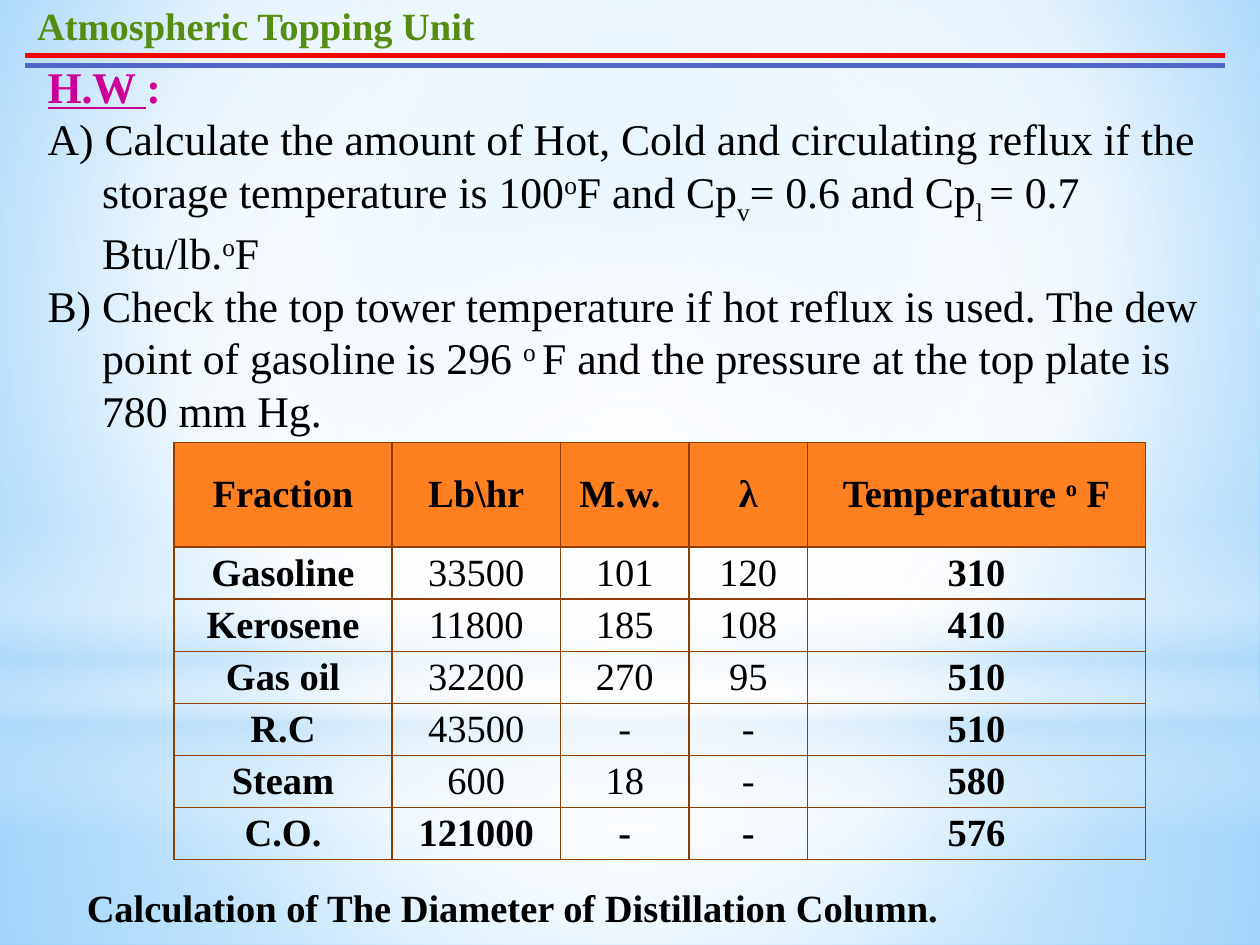
from typing import NamedTuple

from lxml import etree
from pptx import Presentation
from pptx import util as u
from pptx.dml.color import RGBColor
from pptx.enum import shapes, text
from pptx.oxml.ns import qn
from pptx.util import Cm, Pt

FONT = "Times New Roman"
BLACK = RGBColor(0x00, 0x00, 0x00)
WHITE = RGBColor(0xFF, 0xFF, 0xFF)
GREEN = RGBColor(0x56, 0x8D, 0x11)
PINK = RGBColor(0xCC, 0x00, 0x99)
RED = RGBColor(0xFF, 0x00, 0x00)
BLUE = RGBColor(0x4E, 0x67, 0xC8)
ORANGE = RGBColor(0xFF, 0x80, 0x21)
BROWN = RGBColor(0x90, 0x3E, 0x00)
PALE = RGBColor(0xB4, 0xDC, 0xFA)
SKY = RGBColor(0x9E, 0xD5, 0xFF)
DEEP = RGBColor(0x5B, 0xB9, 0xFF)


class Stop(NamedTuple):
    pos: int
    color: RGBColor
    alpha: int = 100


class Glow(NamedTuple):
    """A gradient; focus is left, top, right, bottom in percent, None means linear."""
    stops: list[Stop]
    focus: tuple[int, int, int, int] | None = (50, 50, 50, 50)


class Layer(NamedTuple):
    kind: shapes.MSO_SHAPE
    top: float
    height: float
    glow: Glow


class Rule(NamedTuple):
    y: float
    color: RGBColor


class Style(NamedTuple):
    size: float = 22
    color: RGBColor = BLACK
    bold: bool = True


class Line(NamedTuple):
    """Pieces are parted by |; a leading ^ raises one and a leading _ lowers it."""
    words: str
    inset: bool = True


RECT, OVAL = shapes.MSO_SHAPE.RECTANGLE, shapes.MSO_SHAPE.OVAL
BACK = Glow([Stop(0, SKY), Stop(60, WHITE), Stop(100, DEEP)], (20, 10, 20, 60))
LAYERS = [
    Layer(RECT, 14.17, 4.88, Glow([Stop(0, WHITE, 91), Stop(37, WHITE, 76), Stop(100, PALE, 79)])),
    Layer(RECT, 0, 14.17, Glow([Stop(0, WHITE, 89), Stop(48, WHITE, 62), Stop(100, PALE, 79)])),
    Layer(RECT, 10.46, 6.35, Glow([
        Stop(0, WHITE, 0), Stop(29, WHITE, 30), Stop(45, PALE, 40),
        Stop(55, WHITE, 26), Stop(65, PALE, 60), Stop(100, WHITE, 0)], None)),
    Layer(OVAL, 4.45, 14.17, Glow([Stop(0, WHITE), Stop(56, WHITE, 0)])),
]
RULES = [Rule(1.32, BLUE), Rule(1.12, RED)]
TASKS = [
    Line("A) Calculate the amount of Hot, Cold and circulating reflux if the", False),
    Line("storage temperature is 100|^o|F and Cp|_v|= 0.6 and Cp|_l |= 0.7"),
    Line("Btu/lb.|^o|F"),
    Line("B) Check the top tower temperature if hot reflux is used. The dew", False),
    Line("point of gasoline is 296 |^o |F and the pressure at the top plate is"),
    Line("780 mm Hg."),
]
COLS = [4.39, 3.4, 2.59, 2.39, 6.81]
HEAD, ROW = 2.11, 1.05
DATA = [
    ["Fraction", "Lb\\hr", "M.w. ", "λ", "Temperature |^o| F"],
    ["Gasoline", "33500", "101", "120", "310"],
    ["Kerosene", "11800", "185", "108", "410"],
    ["Gas oil", "32200", "270", "95", "510"],
    ["R.C", "43500", "-", "-", "510"],
    ["Steam", "600", "18", "-", "580"],
    ["C.O.", "121000", "-", "-", "576"],
]


def node(up, tag: str, **attrs):
    return etree.SubElement(up, qn(tag), {k: str(v) for k, v in attrs.items()})


def paint(fill, root, glow: Glow) -> None:
    """Give a fill the stops of a glow, with their opacity."""
    fill.gradient()
    grad = next(root.iter(qn("a:gradFill")))
    for kid in list(grad):
        grad.remove(kid)
    row = node(grad, "a:gsLst")
    for stop in glow.stops:
        tint = node(node(row, "a:gs", pos=stop.pos * 1000), "a:srgbClr", val=stop.color)
        if stop.alpha < 100:
            node(tint, "a:alpha", val=stop.alpha * 1000)
    if glow.focus is None:
        node(grad, "a:lin", ang=5400000, scaled=0)
    else:
        spots = {k: v * 1000 for k, v in zip("ltrb", glow.focus)}
        node(node(grad, "a:path", path="circle"), "a:fillToRect", **spots)


def draw_layer(slide, layer: Layer) -> None:
    shape = slide.shapes.add_shape(layer.kind, 0, Cm(layer.top), Cm(25.4), Cm(layer.height))
    shape.shadow.inherit = False
    shape.line.fill.background()
    paint(shape.fill, shape.element, layer.glow)


def draw_rule(slide, rule: Rule) -> None:
    line = slide.shapes.add_connector(
        shapes.MSO_CONNECTOR.STRAIGHT, Cm(0.51), Cm(rule.y), Cm(24.69), Cm(rule.y))
    line.line.color.rgb = rule.color
    line.line.width = Pt(3)
    node(line.element.spPr, "a:effectLst")


def write(para, words: str, style: Style) -> None:
    for piece in words.split("|"):
        shift = {"^": 30000, "_": -30000}.get(piece[0], 0)
        run = para.add_run()
        run.text = piece[1:] if shift else piece
        font = run.font
        font.name, font.size, font.bold = FONT, Pt(style.size), style.bold
        font.color.rgb = style.color
        if shift:
            font._element.set("baseline", str(shift))


def add_box(slide, left: float, top: float, width: float, height: float):
    box = slide.shapes.add_textbox(Cm(left), Cm(top), Cm(width), Cm(height))
    frame = box.text_frame
    frame.word_wrap = True
    frame.auto_size = text.MSO_AUTO_SIZE.SHAPE_TO_FIT_TEXT
    return frame


def edge(cell) -> None:
    """Line all four sides of a cell, ahead of its fill."""
    props = cell._tc.get_or_add_tcPr()
    for i, side in enumerate("LRTB"):
        line = node(props, f"a:ln{side}", w=u.Pt(1))
        node(node(line, "a:solidFill"), "a:srgbClr", val=BROWN)
        props.insert(i, line)


def draw_table(slide) -> None:
    table = slide.shapes.add_table(
        len(DATA), len(COLS), Cm(3.51), Cm(8.92),
        Cm(sum(COLS)), Cm(HEAD + ROW * (len(DATA) - 1))).table
    table.first_row = table.horz_banding = False
    for col, width in zip(table.columns, COLS):
        col.width = Cm(width)
    for r, row in enumerate(DATA):
        table.rows[r].height = Cm(ROW if r else HEAD)
        for c, words in enumerate(row):
            cell = table.cell(r, c)
            cell.margin_left = cell.margin_right = Cm(0.18)
            cell.margin_top = cell.margin_bottom = 0
            cell.vertical_anchor = text.MSO_ANCHOR.MIDDLE
            if r:
                cell.fill.background()
            else:
                cell.fill.solid()
                cell.fill.fore_color.rgb = ORANGE
            edge(cell)
            para = cell.text_frame.paragraphs[0]
            para.alignment = text.PP_ALIGN.CENTER
            bold = r in (0, len(DATA) - 1) or c in (0, len(COLS) - 1)
            write(para, words, Style(bold=bold))


def draw_tasks(slide) -> None:
    frame = add_box(slide, 0.71, 1.12, 24, 7.75)
    frame.vertical_anchor = text.MSO_ANCHOR.MIDDLE
    head = frame.paragraphs[0]
    write(head, "H.W |:", Style(25, PINK))
    head.runs[0].font.underline = True
    for line in TASKS:
        para = frame.add_paragraph()
        if line.inset:
            para._p.get_or_add_pPr().set("marL", str(Cm(1.1)))
        write(para, line.words, Style(25, bold=False))


def main() -> None:
    deck = Presentation()
    deck.slide_width, deck.slide_height = Cm(25.4), Cm(19.05)
    slide = deck.slides.add_slide(deck.slide_layouts[6])
    paint(slide.background.fill, slide.element, BACK)
    for layer in LAYERS:
        draw_layer(slide, layer)
    for rule in RULES:
        draw_rule(slide, rule)
    title = add_box(slide, 0.3, -0.08, 10.16, 1.19)
    title.margin_left = Cm(0.45)
    write(title.paragraphs[0], "Atmospheric Topping Unit", Style(color=GREEN))
    draw_table(slide)
    draw_tasks(slide)
    note = add_box(slide, 1.5, 17.7, 22.4, 1.19)
    write(note.paragraphs[0], "Calculation of The Diameter of Distillation Column.", Style())
    deck.save("out.pptx")


if __name__ == "__main__":
    main()
